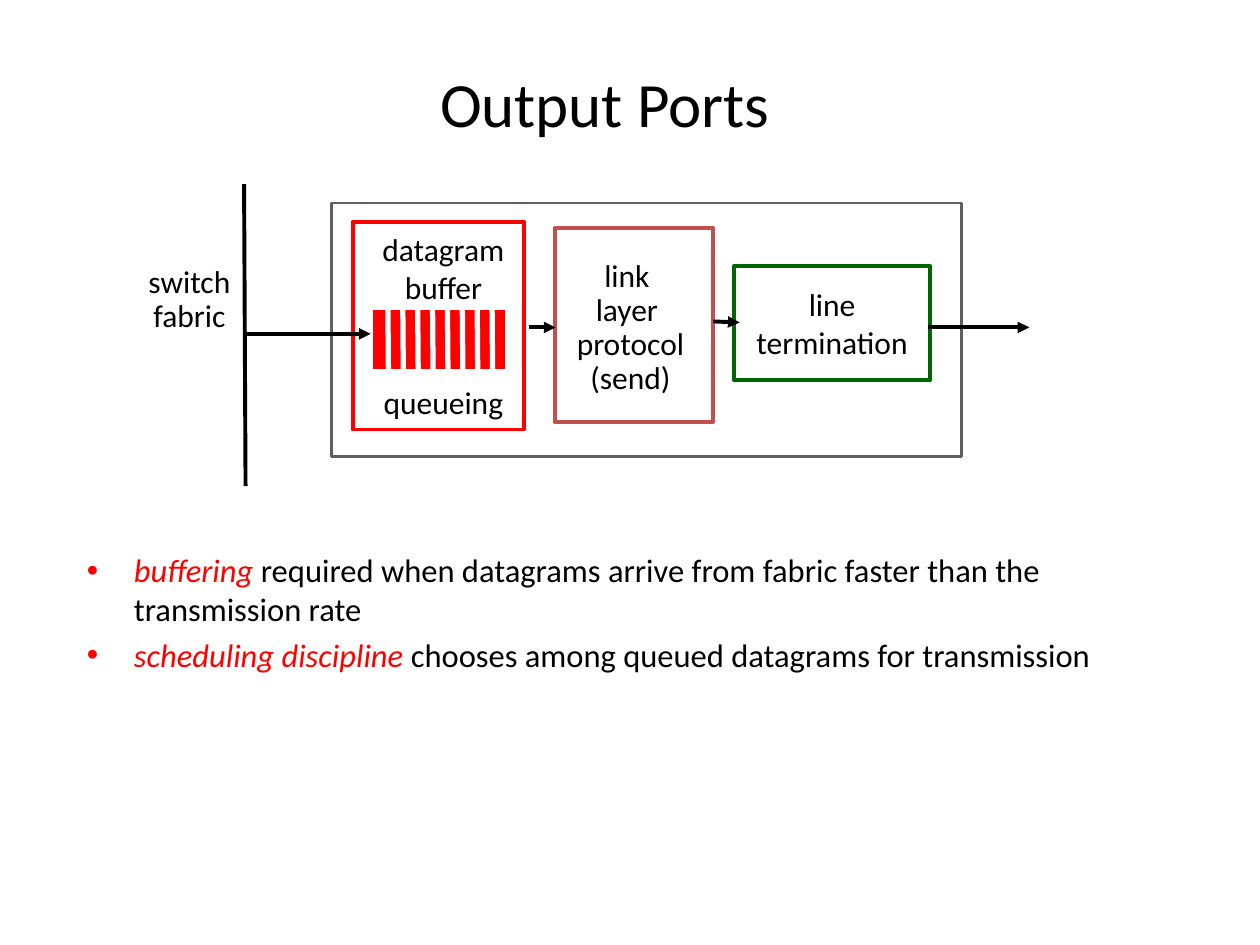
from pptx import Presentation
from pptx.dml.color import RGBColor
from pptx.enum.shapes import MSO_CONNECTOR, MSO_SHAPE
from pptx.enum.text import MSO_ANCHOR, PP_ALIGN
from pptx.oxml.ns import qn
from pptx.util import Cm, Pt
from lxml import etree

RECT = MSO_SHAPE.RECTANGLE
LINE = MSO_CONNECTOR.STRAIGHT
TOP, MID = MSO_ANCHOR.TOP, MSO_ANCHOR.MIDDLE
LEFT, CENTER = PP_ALIGN.LEFT, PP_ALIGN.CENTER
BLACK, WHITE, RED = "000000", "FFFFFF", "FF0000"
LABEL = {"name": "Calibri", "size": Pt(18)}
TITLE = {"name": "Calibri", "size": Pt(36)}
BODY = {"name": "Calibri", "size": Pt(18.6)}


def rgb(text):
    return RGBColor.from_string(text)


def style(font, look, color=BLACK):
    for key, value in look.items():
        setattr(font, key, value)
    font.color.rgb = rgb(color)


def add_box(slide, at, fill=WHITE, line=None, width=2.25):
    box = slide.shapes.add_shape(RECT, *map(Cm, at))
    box.shadow.inherit = False
    box.fill.solid()
    box.fill.fore_color.rgb = rgb(fill)
    if line:
        box.line.color.rgb = rgb(line)
        box.line.width = Pt(width)
    else:
        box.line.fill.background()
    return box


def add_line(slide, start, end, color=BLACK, width=2.25, arrow=False):
    line = slide.shapes.add_connector(LINE, *map(Cm, start + end))
    line.line.color.rgb = rgb(color)
    line.line.width = Pt(width)
    if arrow:
        edge = line.line._get_or_add_ln()
        etree.SubElement(edge, qn("a:tailEnd"), type="triangle")
    etree.SubElement(line._element.spPr, qn("a:effectLst"))


def add_text(slide, at):
    return slide.shapes.add_textbox(*map(Cm, at))


def write(shape, rows, look=LABEL, anchor=MID, wrap=False, space=None):
    """Put centred rows of text in a shape and return its paragraphs."""
    frame = shape.text_frame
    frame.word_wrap = wrap
    frame.vertical_anchor = anchor
    frame.text = "\n".join(rows)
    for para in frame.paragraphs:
        para.alignment = CENTER
        para.line_spacing = space
        for run in para.runs:
            style(run.font, look)
    return frame.paragraphs


def add_points(slide, at, points):
    frame = add_text(slide, at).text_frame
    frame.word_wrap = True
    for i, (term, rest) in enumerate(points):
        para = frame.add_paragraph() if i else frame.paragraphs[0]
        para.alignment = LEFT
        if i:
            para.space_before = Pt(3.7)
        props = para._p.get_or_add_pPr()
        props.set("marL", str(Cm(0.95)))
        props.set("indent", str(-Cm(0.95)))
        etree.SubElement(props, qn("a:buFont"), typeface="Arial")
        etree.SubElement(props, qn("a:buChar"), char="•")
        for text, color in ((term, RED), (rest, BLACK)):
            run = para.add_run()
            run.text = text
            style(run.font, {**BODY, "italic": color == RED}, color)


def add_buffer(slide):
    add_box(slide, (7.11, 4.47, 3.45, 4.19), line=RED)
    label = add_text(slide, (7.29, 4.52, 3.3, 4.06))
    rows = write(label, ["datagram", "buffer", "queueing"], anchor=TOP)
    rows[-1].space_before = Pt(44)  # room for the queue
    add_box(slide, (7.47, 6.2, 2.77, 1.3), RED, WHITE, 3)
    for i in range(8):
        x = 7.82 + 0.3 * i
        add_line(slide, (x, 6.22), (x + 0.01, 7.47), WHITE, 3)


def main():
    deck = Presentation()
    deck.slide_width, deck.slide_height = Cm(25.4), Cm(19.05)
    slide = deck.slides.add_slide(deck.slide_layouts[6])

    # Title and points
    title = add_text(slide, (1.4, 1.12, 21.59, 1.9))
    write(title, ["Output Ports"], TITLE, wrap=True)
    add_points(slide, (1.5, 10.97, 21.59, 2.54), [
        ("buffering", " required when datagrams arrive from fabric "
                      "faster than the transmission rate"),
        ("scheduling discipline",
         " chooses among queued datagrams for transmission"),
    ])

    # Port frame and its stages
    add_box(slide, (6.68, 4.09, 12.7, 5.11), line="5F5F5F", width=1.5)
    end = add_box(slide, (14.8, 5.36, 3.95, 2.31), line="006600")
    write(end, ["line", "termination"])
    add_box(slide, (11.18, 4.6, 3.2, 3.91), line="C0504D")

    # Arrows between stages
    for start, stop in (((10.67, 6.6), (11.2, 6.6)),
                        ((14.38, 6.48), (14.91, 6.5)),
                        ((18.7, 6.6), (20.75, 6.6))):
        add_line(slide, start, stop, arrow=True)

    # Tight labels
    for at, rows in (
        ((11.25, 5.46, 2.92, 2.31), ["link ", "layer ", "protocol", "(send)"]),
        ((2.36, 4.9, 2.92, 2.31), ["switch", "fabric"]),
    ):
        write(add_box(slide, at), rows, space=0.9)

    # Buffer, then the fabric feeding it
    add_buffer(slide)
    add_line(slide, (4.92, 3.71), (4.95, 9.8))
    add_line(slide, (4.92, 6.73), (7.47, 6.73), arrow=True)

    deck.save("out.pptx")


if __name__ == "__main__":
    main()
